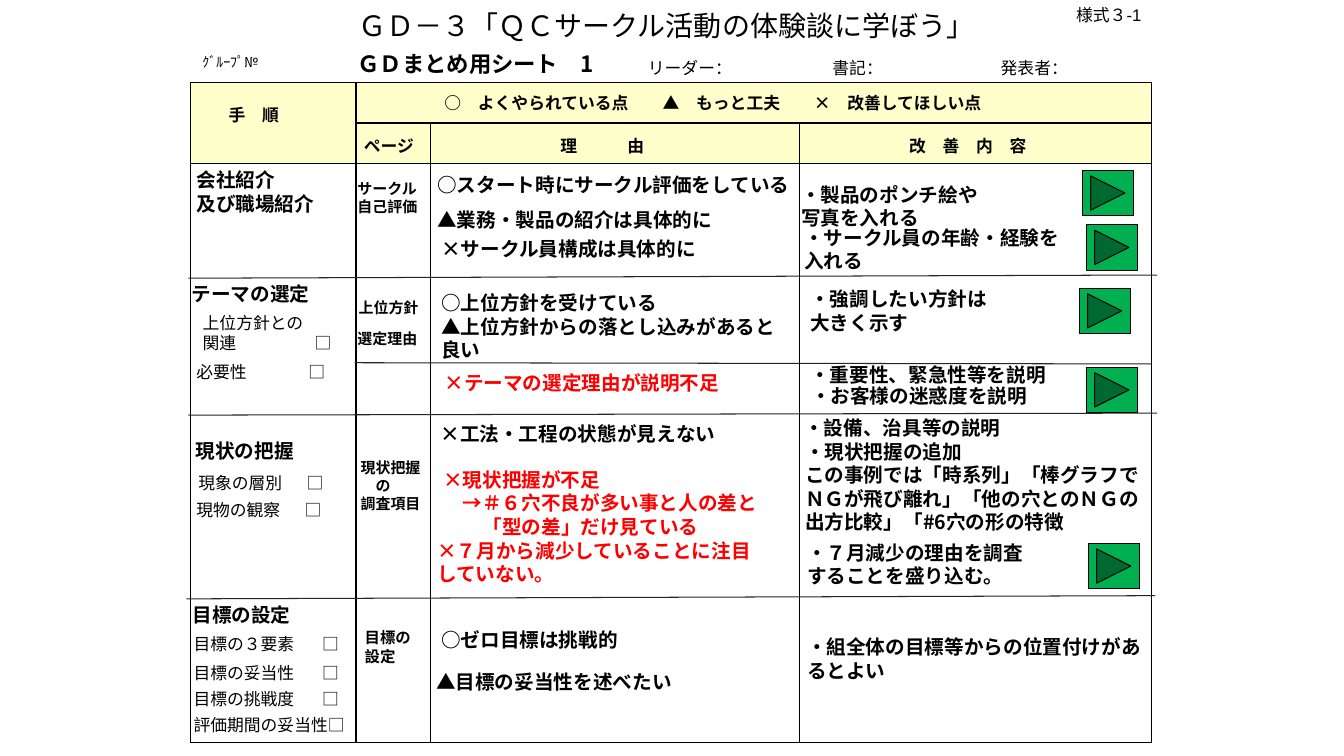
from dataclasses import dataclass

from lxml import etree
from pptx import Presentation
from pptx.dml.color import RGBColor
from pptx.enum.shapes import MSO_CONNECTOR, MSO_SHAPE
from pptx.enum.text import MSO_ANCHOR, MSO_AUTO_SIZE, PP_ALIGN
from pptx.oxml.ns import qn
from pptx.util import Cm, Pt

STRAIGHT = MSO_CONNECTOR.STRAIGHT
FORWARD_BUTTON = MSO_SHAPE.ACTION_BUTTON_FORWARD_OR_NEXT
TOP = MSO_ANCHOR.TOP
NO_RESIZE = MSO_AUTO_SIZE.NONE
CENTER = PP_ALIGN.CENTER

BLACK = RGBColor(0x00, 0x00, 0x00)
RULE_GRAY = RGBColor(0x26, 0x26, 0x26)
RED = RGBColor(0xFF, 0x00, 0x00)
GREEN = RGBColor(0x00, 0xB0, 0x50)
CREAM = RGBColor(0xFF, 0xFF, 0xCC)
GOTHIC = "Noto Sans CJK JP"


@dataclass(frozen=True)
class Style:
    size: float
    bold: bool = False
    color: RGBColor = BLACK
    padded: bool = True
    font: str = GOTHIC


@dataclass(frozen=True)
class Label:
    """A text box; lengths, tab stops and line indents are in centimetres."""
    left: float
    top: float
    width: float
    height: float
    style: Style
    lines: tuple[str, ...]
    tabs: tuple[float, ...] = ()
    indents: tuple[float, ...] = ()


@dataclass(frozen=True)
class Rule:
    left: float
    start: float
    right: float
    end: float


TITLE = Style(20)
SHEET = Style(16, bold=True)
GROUP = Style(10)
FORM = Style(12, font="Arial")
ROLES = Style(12)
HEADING = Style(12, bold=True)
STEP = Style(14, bold=True, padded=False)
CHECK = Style(12, padded=False)
PAGE = Style(10.7, bold=True)
GOAL_PAGE = Style(11, bold=True)
NOTE = Style(14, bold=True)
ALERT = Style(14, bold=True, color=RED)

TITLE_LABEL = Label(7.7, 0.08, 18.19, 1.12, TITLE, ("ＧＤ－３「ＱＣサークル活動の体験談に学ぼう」",))

LABELS = (
    # Sheet header
    Label(8.76, 1.14, 6.68, 0.94, SHEET, ("ＧＤまとめ用シート　1",)),
    Label(4.85, 1.22, 2.72, 0.69, GROUP, ("ｸﾞﾙｰﾌﾟ№",)),
    Label(16.08, 1.32, 13.54, 0.76, ROLES, ("リーダー：\t書記：\t発表者：",), (4.65, 8.89)),
    Label(26.87, 0, 2.18, 0.76, FORM, ("様式３-1",)),
    # Table headings
    Label(5.51, 2.51, 2.18, 0.76, HEADING, ("手　順",)),
    Label(10.95, 2.21, 14.4, 0.8, HEADING,
          ("○　よくやられている点\t▲　もっと工夫\t×　改善してほしい点",), (5.5, 9.31)),
    Label(8.92, 3.28, 2.97, 0.76, HEADING, ("ページ",)),
    Label(13.87, 3.28, 3.18, 0.76, HEADING, ("理\t由",), (1.69,)),
    Label(22.66, 3.28, 3.81, 0.76, HEADING, ("改　善　内　容",)),
    # Steps and their check boxes
    Label(4.95, 4.24, 3.71, 1.19, STEP, ("会社紹介", "及び職場紹介")),
    Label(4.83, 7.11, 3.76, 0.61, STEP, ("テーマの選定",)),
    Label(5.11, 7.87, 3.5, 1.02, CHECK, ("上位方針との", "関連\t□"), (2.82,)),
    Label(4.95, 9.12, 3.5, 0.51, CHECK, ("必要性\t□",), (2.82,)),
    Label(4.93, 11.05, 3.66, 0.61, STEP, ("現状の把握",)),
    Label(5.0, 11.91, 3.5, 0.51, CHECK, ("現象の層別\t□",), (2.73,)),
    Label(4.95, 12.6, 3.5, 0.51, CHECK, ("現物の観察\t□",), (2.73,)),
    Label(4.85, 15.19, 2.9, 0.61, STEP, ("目標の設定",)),
    Label(4.88, 15.98, 3.84, 0.51, CHECK, ("目標の３要素\t□",), (3.24,)),
    Label(4.88, 16.69, 3.84, 0.51, CHECK, ("目標の妥当性\t□",), (3.24,)),
    Label(4.88, 17.35, 3.84, 0.51, CHECK, ("目標の挑戦度\t□",), (3.24,)),
    Label(4.88, 18.01, 5.61, 0.51, CHECK, ("評価期間の妥当性□",)),
    # Pages
    Label(8.76, 4.39, 3.12, 1.17, PAGE, ("サークル", "自己評価")),
    Label(8.79, 7.39, 3.3, 0.71, PAGE, ("上位方針",)),
    Label(8.76, 8.18, 2.31, 0.71, PAGE, ("選定理由",)),
    Label(8.84, 11.43, 3.43, 1.63, PAGE, ("現状把握", "の", "調査項目"), indents=(0, 0.38, 0)),
    Label(8.94, 15.7, 1.9, 1.19, GOAL_PAGE, ("目標の", "設定")),
    # Reasons
    Label(10.77, 4.22, 9.53, 0.86, NOTE, ("○スタート時にサークル評価をしている",)),
    Label(10.77, 5.11, 8.71, 0.86, NOTE, ("▲業務・製品の紹介は具体的に",)),
    Label(10.87, 5.84, 7.37, 0.86, NOTE, ("×サークル員構成は具体的に",)),
    Label(10.87, 7.19, 7.04, 0.86, NOTE, ("○上位方針を受けている",)),
    Label(10.87, 7.8, 9.14, 1.45, NOTE, ("▲上位方針からの落とし込みがあると良い",)),
    Label(10.95, 9.22, 9.04, 0.86, ALERT, ("×テーマの選定理由が説明不足",)),
    Label(10.85, 10.49, 8.43, 0.86, NOTE, ("×工法・工程の状態が見えない",)),
    Label(10.92, 11.66, 9.07, 2.06, ALERT,
          ("×現状把握が不足", "→＃６穴不良が多い事と人の差と", "「型の差」だけ見ている"),
          indents=(0, 0.49, 0.99)),
    Label(10.77, 13.44, 8.66, 1.45, ALERT, ("×７月から減少していることに注目していない。",)),
    Label(10.87, 15.7, 6.3, 0.86, NOTE, ("○ゼロ目標は挑戦的",)),
    Label(10.74, 16.74, 6.86, 0.86, NOTE, ("▲目標の妥当性を述べたい",)),
    # Improvements
    Label(19.94, 4.47, 7.14, 1.5, NOTE, ("・製品のポンチ絵や", "写真を入れる")),
    Label(20.02, 5.56, 7.21, 1.45, NOTE, ("・サークル員の年齢・経験を", "入れる")),
    Label(20.17, 7.11, 8.84, 1.45, NOTE, ("・強調したい方針は", "大きく示す")),
    Label(20.17, 9.02, 8.56, 0.86, NOTE, ("・重要性、緊急性等を説明",)),
    Label(20.19, 9.55, 8.53, 0.86, NOTE, ("・お客様の迷惑度を説明",)),
    Label(20.02, 10.34, 8.08, 0.86, NOTE, ("・設備、治具等の説明",)),
    Label(20.04, 10.95, 8.97, 2.64, NOTE,
          ("・現状把握の追加",
           "この事例では「時系列」「棒グラフでＮＧが飛び離れ」「他の穴とのＮＧの出方比較」「#6穴の形の特徴")),
    Label(20.09, 13.49, 6.38, 1.45, NOTE, ("・７月減少の理由を調査することを盛り込む。",)),
    Label(20.09, 15.88, 8.99, 1.45, NOTE, ("・組全体の目標等からの位置付けがあるとよい",)),
)

RULES = (
    Rule(4.75, 7.01, 29.16, 6.93),
    Rule(8.94, 9.14, 29.01, 9.17),
    Rule(4.75, 10.46, 29.16, 10.41),
    Rule(4.7, 15.09, 29.11, 15.01),
)
BUTTONS = ((27.28, 4.29), (27.38, 5.66), (27.2, 7.26), (27.38, 9.25), (27.43, 13.69))
COLUMN_WIDTHS = (4.17, 1.88, 9.3, 8.86)
ROW_HEIGHTS = (1.02, 1.02, 14.6)


def fill_text(frame, label: Label) -> None:
    style = label.style
    frame.word_wrap = True
    frame.auto_size = NO_RESIZE
    frame.vertical_anchor = TOP
    frame.margin_left = frame.margin_right = Cm(0.25 if style.padded else 0)
    frame.margin_top = frame.margin_bottom = Cm(0.13 if style.padded else 0)
    for index, line in enumerate(label.lines):
        para = frame.paragraphs[0] if index == 0 else frame.add_paragraph()
        properties = para._p.get_or_add_pPr()
        if label.indents:
            properties.set("marL", str(Cm(label.indents[index])))
        if "\t" in line:
            stops = etree.SubElement(properties, qn("a:tabLst"))
            for stop in label.tabs:
                etree.SubElement(stops, qn("a:tab"), pos=str(Cm(stop)), algn="l")
        span = para.add_run()
        span.text = line
        span.font.name = style.font
        span.font.size = Pt(style.size)
        span.font.bold = style.bold
        span.font.color.rgb = style.color
        etree.SubElement(span._r.get_or_add_rPr(), qn("a:ea"), typeface=GOTHIC)


def add_title(page, label: Label) -> None:
    title = page.shapes.title
    title.left, title.top = Cm(label.left), Cm(label.top)
    title.width, title.height = Cm(label.width), Cm(label.height)
    fill_text(title.text_frame, label)
    title.text_frame.paragraphs[0].alignment = CENTER


def add_label(page, label: Label) -> None:
    box = page.shapes.add_textbox(Cm(label.left), Cm(label.top), Cm(label.width), Cm(label.height))
    fill_text(box.text_frame, label)


def add_borders(cell) -> None:
    properties = cell._tc.get_or_add_tcPr()
    for side in ("a:lnL", "a:lnR", "a:lnT", "a:lnB"):
        border = etree.SubElement(properties, qn(side), w=str(Pt(1)))
        paint = etree.SubElement(border, qn("a:solidFill"))
        etree.SubElement(paint, qn("a:srgbClr"), val=str(BLACK))


def add_grid(page) -> None:
    frame = page.shapes.add_table(len(ROW_HEIGHTS), len(COLUMN_WIDTHS), Cm(4.8), Cm(2.08),
                                  Cm(sum(COLUMN_WIDTHS)), Cm(sum(ROW_HEIGHTS)))
    table = frame.table
    table.first_row = table.horz_banding = False
    for column, width in zip(table.columns, COLUMN_WIDTHS):
        column.width = Cm(width)
    for number, (row, height) in enumerate(zip(table.rows, ROW_HEIGHTS)):
        row.height = Cm(height)
        for cell in row.cells:
            cell.margin_top = cell.margin_bottom = 0
            add_borders(cell)
            if number < 2:
                cell.fill.solid()
                cell.fill.fore_color.rgb = CREAM
            else:
                cell.fill.background()
    table.cell(0, 0).merge(table.cell(1, 0))
    table.cell(0, 1).merge(table.cell(0, 3))


def add_rule(page, rule: Rule) -> None:
    line = page.shapes.add_connector(STRAIGHT, Cm(rule.left), Cm(rule.start), Cm(rule.right), Cm(rule.end))
    line.line.color.rgb = RULE_GRAY
    line.line.width = Pt(0.75)
    etree.SubElement(line._element.spPr, qn("a:effectLst"))


def add_button(page, left: float, top: float) -> None:
    button = page.shapes.add_shape(FORWARD_BUTTON, Cm(left), Cm(top), Cm(1.28), Cm(1.15))
    button.shadow.inherit = False
    button.fill.solid()
    button.fill.fore_color.rgb = GREEN
    button.line.color.rgb = BLACK
    button.line.width = Pt(0.75)


def main() -> None:
    deck = Presentation()
    deck.slide_width, deck.slide_height = Cm(33.87), Cm(19.05)
    page = deck.slides.add_slide(deck.slide_layouts[5])
    add_grid(page)
    add_title(page, TITLE_LABEL)
    for label in LABELS:
        add_label(page, label)
    for rule in RULES:
        add_rule(page, rule)
    for left, top in BUTTONS:
        add_button(page, left, top)
    deck.save("out.pptx")


if __name__ == "__main__":
    main()
